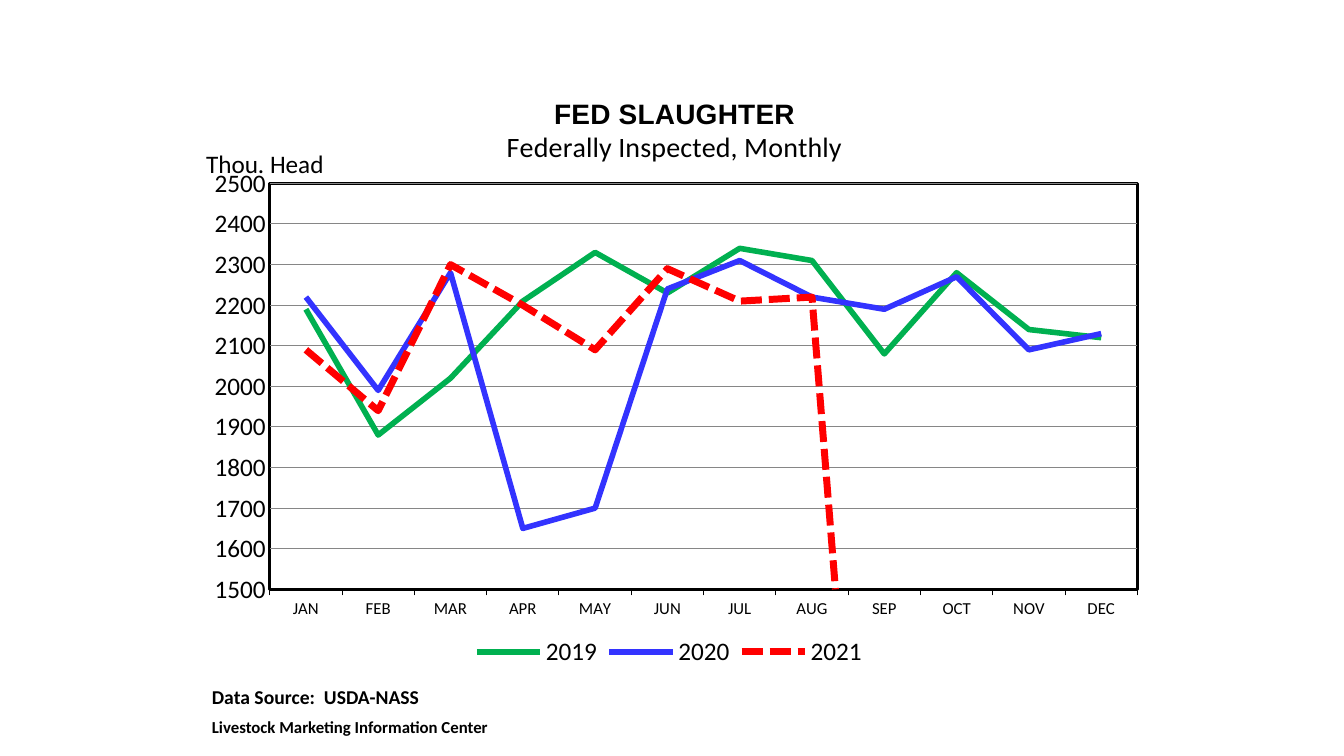
from pptx import Presentation
from pptx.chart.data import CategoryChartData
from pptx.dml.color import RGBColor
from pptx.enum.chart import XL_CHART_TYPE, XL_LEGEND_POSITION, XL_TICK_MARK
from pptx.enum.dml import MSO_LINE
from pptx.oxml import parse_xml
from pptx.oxml.ns import nsdecls
from pptx.util import Emu, Pt

BLACK = RGBColor(0x00, 0x00, 0x00)
GRAY = RGBColor(0x86, 0x86, 0x86)
GREEN = RGBColor(0x00, 0xB0, 0x50)
BLUE = RGBColor(0x33, 0x33, 0xFF)
RED = RGBColor(0xFF, 0x00, 0x00)

MONTHS = "JAN FEB MAR APR MAY JUN JUL AUG SEP OCT NOV DEC".split()
YEARS = [
    ("2019", GREEN, 4, None,
     [2190, 1880, 2020, 2210, 2330, 2230, 2340, 2310, 2080, 2280, 2140, 2120]),
    ("2020", BLUE, 4, None,
     [2220, 1990, 2280, 1650, 1700, 2240, 2310, 2220, 2190, 2270, 2090, 2130]),
    ("2021", RED, 5, MSO_LINE.SQUARE_DOT,
     [2090, 1940, 2300, 2200, 2090, 2290, 2210, 2220] + [None] * 4),
]


class Board:
    scale = 914400 / 100.8
    face = "Calibri"

    def __init__(self, deck):
        self.slide = deck.slides.add_slide(deck.slide_layouts[6])

    def px(self, *sizes):
        return [Emu(round(size * self.scale)) for size in sizes]

    def style(self, font, size, bold=False, face=None):
        font.name = face or self.face
        font.size = Pt(size)
        font.bold = bold
        font.color.rgb = BLACK

    def stroke(self, line, color, width):
        line.color.rgb = color
        line.width = Pt(width)

    def fill(self, frame, rows, gap=0):
        for i, (text, size, bold, face) in enumerate(rows):
            para = frame.add_paragraph() if i else frame.paragraphs[0]
            if i and gap:
                para.space_before = Pt(gap)
            run = para.add_run()
            run.text = text
            self.style(run.font, size, bold, face)

    def text(self, box, rows, gap):
        frame = self.slide.shapes.add_textbox(*self.px(*box)).text_frame
        frame.word_wrap = True
        self.fill(frame, rows, gap)

    def place(self, node, index, inner=False, **spots):
        for old in node.xpath("./c:layout"):
            node.remove(old)
        target = '<c:layoutTarget val="inner"/>' if inner else ""
        modes = "".join(f'<c:{key}Mode val="edge"/>' for key in "xy")
        parts = "".join(f'<c:{key} val="{val}"/>' for key, val in spots.items())
        node.insert(index, parse_xml(
            f'<c:layout {nsdecls("c")}><c:manualLayout>{target}{modes}{parts}'
            '</c:manualLayout></c:layout>'))

    def axes(self, chart):
        cat, val = chart.category_axis, chart.value_axis
        for axis, size in ((cat, 12), (val, 18)):
            self.style(axis.tick_labels.font, size)
            self.stroke(axis.format.line, BLACK, 0.75)
            axis.minor_tick_mark = XL_TICK_MARK.NONE
        cat.major_tick_mark = XL_TICK_MARK.OUTSIDE
        val.major_tick_mark = XL_TICK_MARK.NONE
        val.minimum_scale, val.maximum_scale, val.major_unit = 1500, 2500, 100
        val.has_major_gridlines = True
        self.stroke(val.major_gridlines.format.line, GRAY, 0.75)
        title = val.axis_title
        self.fill(title.text_frame, [("Thou. Head", 18, False, None)])
        body = title.element.xpath(".//a:bodyPr")[0]
        body.set("rot", "0")
        body.set("vert", "horz")
        self.place(title.element, 1, x=0.02, y=0.11)

    def chart(self, box):
        data = CategoryChartData(number_format="General")
        data.categories = MONTHS
        for name, *_, vals in YEARS:
            data.add_series(name, vals)
        chart = self.slide.shapes.add_chart(
            XL_CHART_TYPE.LINE, *self.px(*box), data).chart
        self.style(chart.font, 18)
        chart.plots[0].vary_by_categories = False
        for series, (_, color, width, dash, _) in zip(chart.plots[0].series, YEARS):
            series.smooth = False
            self.stroke(series.format.line, color, width)
            if dash:
                series.format.line.dash_style = dash
        self.axes(chart)
        chart.has_title = True
        self.fill(chart.chart_title.text_frame, [
            ("FED SLAUGHTER", 20, True, "Arial"),
            ("Federally Inspected, Monthly", 20, False, None)])
        self.place(chart.chart_title.element, 1, x=0.33, y=0.03)
        chart.has_legend = True
        chart.legend.position = XL_LEGEND_POSITION.BOTTOM
        chart.legend.include_in_layout = False
        self.style(chart.legend.font, 18)
        root = chart.element
        self.place(root.xpath(".//c:legend")[0], 1, x=0.29, y=0.93, w=0.42, h=0.07)
        plot = root.xpath(".//c:plotArea")[0]
        self.place(plot, 0, True, x=0.09, y=0.18, w=0.89, h=0.68)
        plot.append(parse_xml(
            f'<c:spPr {nsdecls("c", "a")}><a:solidFill><a:srgbClr val="FFFFFF"/>'
            f'</a:solidFill><a:ln w="{Pt(2.25)}"><a:solidFill><a:srgbClr val="{BLACK}"/>'
            '</a:solidFill></a:ln></c:spPr>'))
        root.xpath(".//c:dispBlanksAs")[0].set("val", "zero")


def main():
    deck = Presentation()
    deck.slide_width, deck.slide_height = Emu(12192000), Emu(6858000)
    board = Board(deck)
    board.chart((182, 76, 975, 597))
    board.text((202, 680, 454, 65), [
        ("Data Source:  USDA-NASS", 14, True, None),
        ("Livestock Marketing Information Center", 12, True, None)], 6)
    deck.save("out.pptx")


if __name__ == "__main__":
    main()
